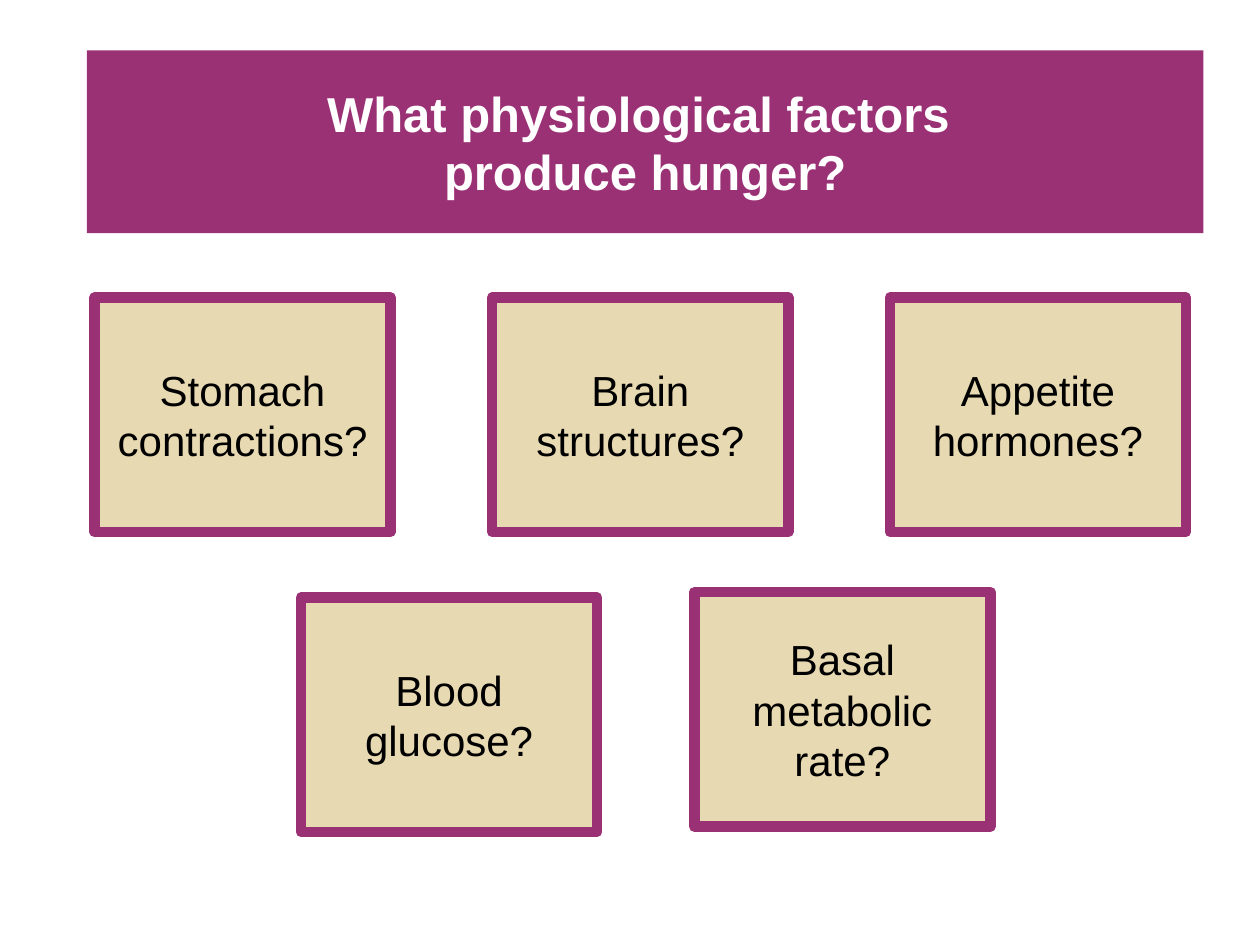
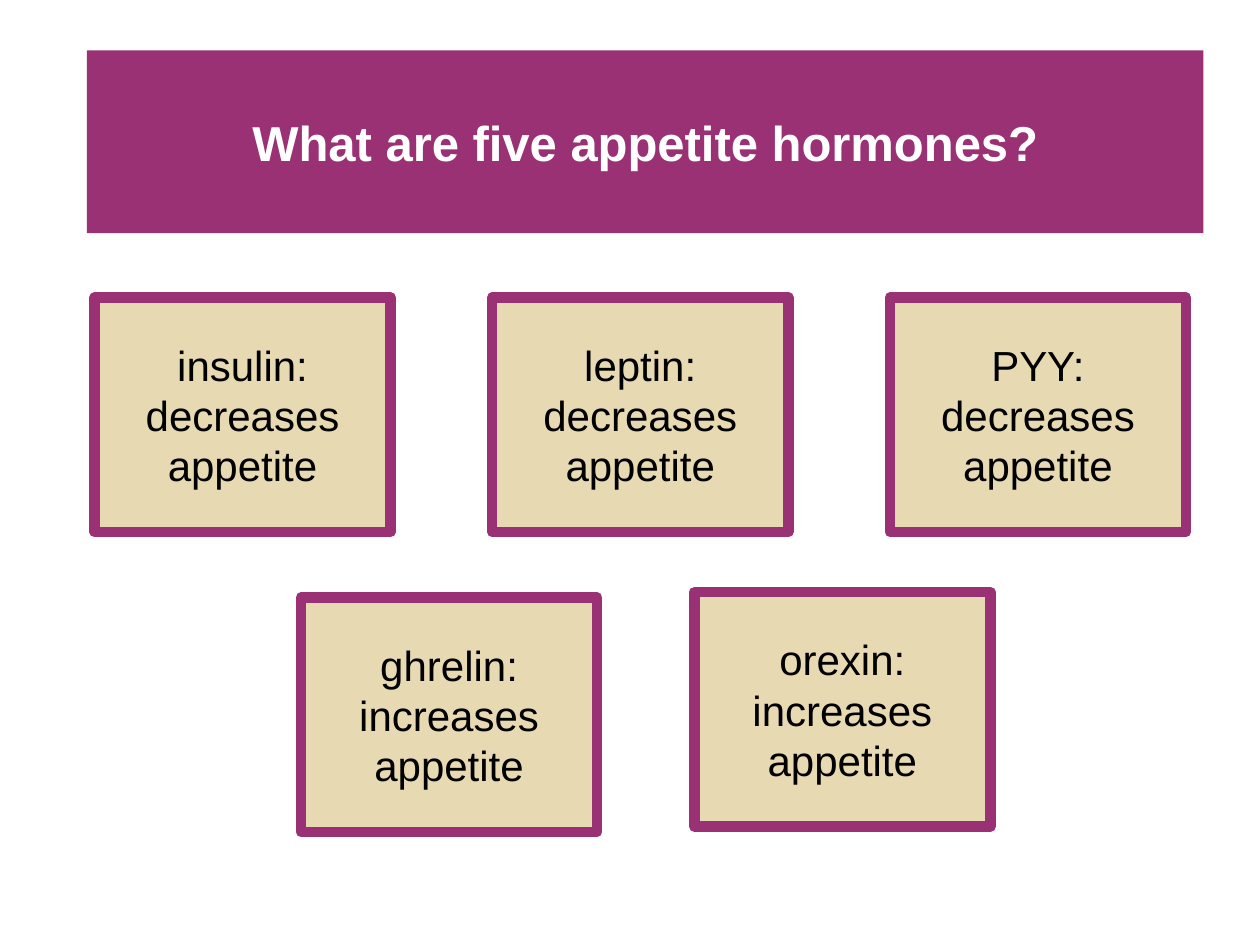
from lxml.etree import SubElement
from pptx import Presentation
from pptx.dml.color import RGBColor as RGB
from pptx.enum.shapes import MSO_SHAPE as Shape
from pptx.enum.text import MSO_ANCHOR as Anchor, PP_ALIGN as Align
from pptx.oxml.ns import qn
from pptx.util import Pt

COLORS = {"plum": "9B3175", "sand": "E7D9B1", "white": "FFFFFF", "black": "000000"}
FONT = "Arial"
TITLE_BOX = (49.7, 28.8, 638, 104.5)
CARD_W, CARD_H = 169.2, 134
TOP_ROW = {"left": 54, "top": 170, "pitch": 227.25}
BOTTOM_ROW = {"left": 172, "top": 341.4, "pitch": 224.75, "drop": -3}

SLIDES = [
    (
        "What physiological factors \vproduce hunger?",
        ["Stomach contractions?", "Brain structures?", "Appetite hormones?"],
        ["Blood glucose?", "Basal metabolic rate?"],
    ),
    (
        "What are five appetite hormones?",
        [
            "insulin: decreases appetite",
            "leptin:\ndecreases appetite",
            "PYY: decreases appetite",
        ],
        ["ghrelin: increases appetite", "orexin: increases appetite"],
    ),
]


def color(name):
    return RGB.from_string(COLORS[name])


def add_panel(s, box, text, fill, ink, size, bold=False):
    sp = s.shapes.add_shape(Shape.RECTANGLE, *map(Pt, box))
    sp.shadow.inherit = False
    sp.fill.solid()
    sp.fill.fore_color.rgb = color(fill)
    sp.line.fill.background()
    tf = sp.text_frame
    tf.word_wrap = True
    tf.vertical_anchor = Anchor.MIDDLE
    tf.text = text
    for p in tf.paragraphs:
        p.alignment = Align.CENTER
        p.font.name = FONT
        p.font.size = Pt(size)
        p.font.bold = bold
        p.font.color.rgb = color(ink)
    return sp


def add_title(s, box, text):
    add_panel(s, box, text, "plum", "white", 28, bold=True)


def add_card(s, box, text):
    sp = add_panel(s, box, text, "sand", "black", 24)
    sp.line.color.rgb = color("plum")
    sp.line.width = Pt(6)
    SubElement(sp.line._get_or_add_ln(), qn("a:round"))


def add_card_row(s, texts, left, top, pitch, drop=0):
    for i, text in enumerate(texts):
        add_card(s, (left + i * pitch, top + i * drop, CARD_W, CARD_H), text)


def add_question_slide(prs, title, top_cards, bottom_cards):
    s = prs.slides.add_slide(prs.slide_layouts[6])
    add_title(s, TITLE_BOX, title)
    add_card_row(s, top_cards, **TOP_ROW)
    add_card_row(s, bottom_cards, **BOTTOM_ROW)


def main():
    prs = Presentation()
    prs.slide_width, prs.slide_height = Pt(720), Pt(540)
    for content in SLIDES:
        add_question_slide(prs, *content)
    prs.save("out.pptx")


if __name__ == "__main__":
    main()
